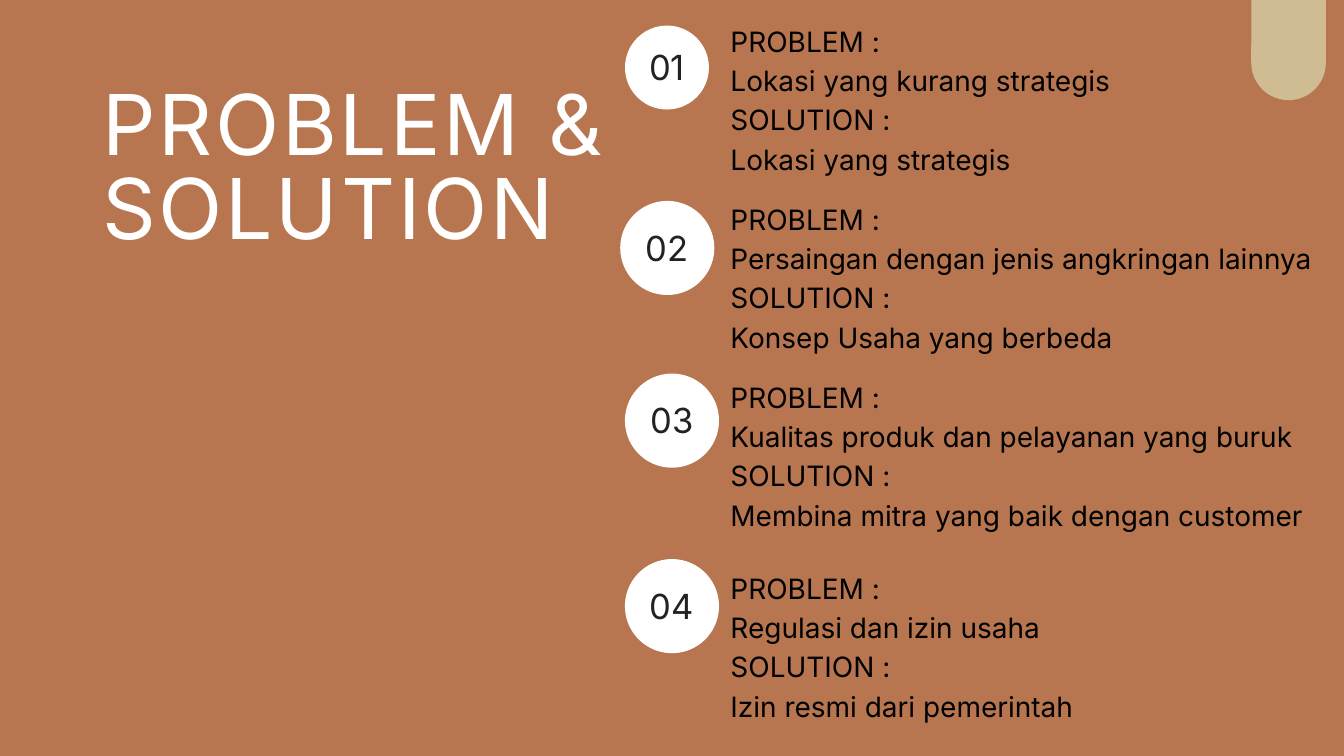
from dataclasses import dataclass

import lxml.etree
import pptx
import pptx.dml.color
import pptx.enum.shapes
import pptx.enum.text
import pptx.oxml.ns
import pptx.util

Inches = pptx.util.Inches
Pt = pptx.util.Pt
ALIGN = pptx.enum.text.PP_ALIGN
ANCHOR = pptx.enum.text.MSO_ANCHOR
SHAPES = pptx.enum.shapes.MSO_SHAPE


@dataclass(frozen=True)
class Theme:
    """Colours, typeface and type sizes of the slide."""
    font: str = "Inter"
    clay: str = "B77650"
    sand: str = "D0BC92"
    white: str = "FFFFFF"
    black: str = "000000"
    charcoal: str = "222222"
    title_size: float = 89.9
    title_tracking: float = 3.1
    body_size: float = 30
    body_leading: float = 42
    number_size: float = 37
    number_leading: float = 51.8


THEME = Theme()
COLUMN_LEFT, COLUMN_WIDTH, ISSUE_HEIGHT = 10.87, 9.64, 2.27
ISSUES = [
    ("Lokasi yang kurang strategis", "Lokasi yang strategis",
     0.28, (9.3, 0.38, 1.25)),
    ("Persaingan dengan jenis angkringan lainnya", "Konsep Usaha yang berbeda",
     2.93, (9.23, 2.99, 1.4)),
    ("Kualitas produk dan pelayanan yang buruk",
     "Membina mitra yang baik dengan customer",
     5.58, (9.3, 5.56, 1.4)),
    ("Regulasi dan izin usaha", "Izin resmi dari pemerintah",
     8.42, (9.3, 8.32, 1.4)),
]


def apply(target, values):
    """Set each attribute of target from a dict of format values."""
    for name, value in values.items():
        setattr(target, name, value)


def rgb(colour):
    """Turn a hex string into a colour value."""
    return pptx.dml.color.RGBColor.from_string(colour)


def place(part, box):
    """Move and size a part to a box given in inches."""
    names = ("left", "top", "width", "height")
    apply(part, dict(zip(names, map(Inches, box))))


def write(part, lines, size, leading, colour, align=ALIGN.LEFT,
          anchor=ANCHOR.TOP, wrap=True, bottom=0):
    """Fill a part with unbulleted lines of one text style."""
    frame = part.text_frame
    frame.text = "\n".join(lines)
    apply(frame, {
        "word_wrap": wrap, "auto_size": pptx.enum.text.MSO_AUTO_SIZE.NONE,
        "vertical_anchor": anchor, "margin_left": 0, "margin_right": 0,
        "margin_top": 0, "margin_bottom": Inches(bottom),
    })
    for paragraph in frame.paragraphs:
        apply(paragraph, {
            "alignment": align, "line_spacing": Pt(leading),
            "space_before": Pt(0), "space_after": Pt(0),
        })
        properties = paragraph._p.get_or_add_pPr()
        apply_xml = {"marL": "0", "indent": "0"}
        properties.attrib.update(apply_xml)
        lxml.etree.SubElement(properties, pptx.oxml.ns.qn("a:buNone"))
        for run in paragraph.runs:
            apply(run.font, {"name": THEME.font, "size": Pt(size), "bold": False})
            run.font.color.rgb = rgb(colour)


def add_plain_shape(slide, kind, box, colour):
    """Add a flat shape without outline or shadow."""
    shape = slide.shapes.add_shape(kind, *map(Inches, box))
    shape.shadow.inherit = False
    shape.fill.solid()
    shape.fill.fore_color.rgb = rgb(colour)
    shape.line.fill.background()
    return shape


def build_heading(heading, box):
    """Set the widely tracked slide title in its box."""
    place(heading, box)
    write(heading, ["PROBLEM & SOLUTION"], THEME.title_size,
          THEME.title_size, THEME.white)
    tracking = str(round(THEME.title_tracking * 100))
    for run in heading.text_frame.paragraphs[0].runs:
        run.font._element.set("spc", tracking)


def build_issue(issue, problem, solution, box):
    """Set one problem and its solution in a box."""
    place(issue, box)
    write(issue, ["PROBLEM :", problem, "SOLUTION :", solution],
          THEME.body_size, THEME.body_leading, THEME.black)


def build_badge(slide, number, box):
    """Draw a numbered disc in a box."""
    badge = add_plain_shape(slide, SHAPES.OVAL, box, THEME.white)
    write(badge, [f"{number:02}"], THEME.number_size, THEME.number_leading,
          THEME.charcoal, ALIGN.CENTER, ANCHOR.MIDDLE, wrap=False, bottom=0.12)


def build_corner_tab(slide, box):
    """Draw the tab with a rounded lower end in a box."""
    tab = add_plain_shape(slide, SHAPES.ROUND_2_SAME_RECTANGLE, box, THEME.sand)
    tab.adjustments[0] = 0
    tab.adjustments[1] = 0.5


def main():
    """Build and save the slide."""
    deck = pptx.Presentation()
    apply(deck, {"slide_width": Inches(20), "slide_height": Inches(11.25)})
    slide = deck.slides.add_slide(deck.slide_layouts.get_by_name("Comparison"))
    slide.background.fill.solid()
    slide.background.fill.fore_color.rgb = rgb(THEME.clay)

    build_heading(slide.shapes.title, (1.52, 1.31, 7.71, 2.54))
    for number, (problem, solution, top, (x, y, size)) in enumerate(ISSUES, 1):
        build_issue(slide.placeholders[number], problem, solution,
                    (COLUMN_LEFT, top, COLUMN_WIDTH, ISSUE_HEIGHT))
        build_badge(slide, number, (x, y, size, size))
    build_corner_tab(slide, (18.62, 0, 1.11, 1.49))

    for placeholder in list(slide.placeholders):
        if not placeholder.text_frame.text:
            placeholder._element.getparent().remove(placeholder._element)
    deck.save("out.pptx")


if __name__ == "__main__":
    main()
